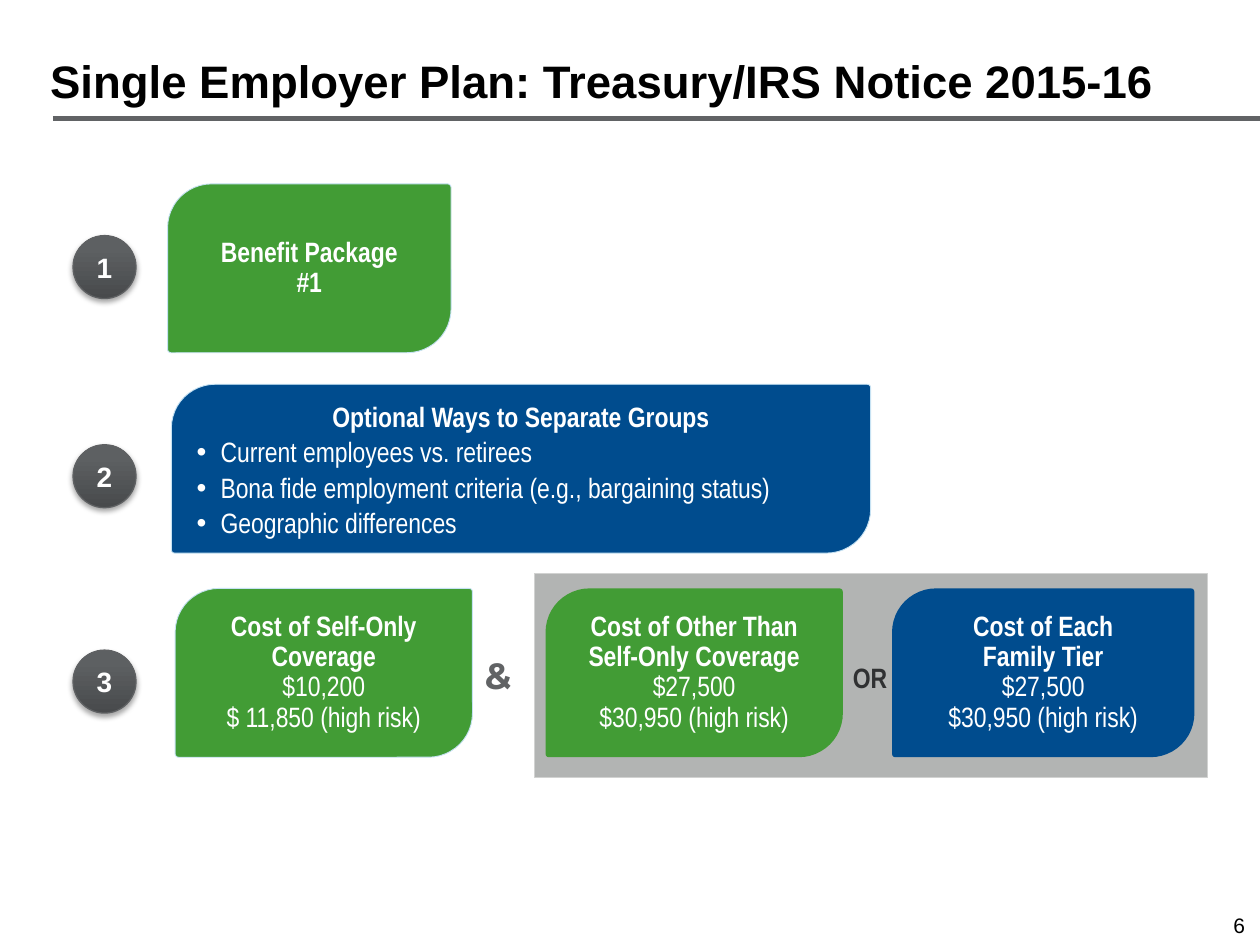
from dataclasses import dataclass

import pptx
import pptx.dml.color
import pptx.enum.dml
import pptx.enum.shapes
import pptx.enum.text
import pptx.oxml
import pptx.oxml.ns
import pptx.slide
import pptx.util
from pptx.util import Inches

ALIGN = pptx.enum.text.PP_ALIGN
ANCHOR = pptx.enum.text.MSO_ANCHOR
SHAPE = pptx.enum.shapes.MSO_SHAPE
GREEN, BLUE, PALE_BLUE, WHITE = "429C35", "004C8E", "C6E2F3", "FFFFFF"
GRAY, BLACK = "616365", "000000"
NARROW = "Arial Narrow"
CARD_HEIGHT = 1.34


@dataclass
class Card:
    left: float
    top: float
    width: float
    fill: str
    outline: str | None
    heading: tuple[str, ...]
    amounts: tuple[str, ...] = ()


@dataclass
class Label:
    text: str
    left: float
    top: float
    width: float
    height: float
    size: int
    font: str
    color: str
    bold: bool = True
    align: ALIGN = ALIGN.LEFT
    anchor: ANCHOR = ANCHOR.TOP


def rgb(color: str) -> pptx.dml.color.RGBColor:
    return pptx.dml.color.RGBColor.from_string(color)


def add_run(paragraph, text: str, size: int, font: str, color: str, bold: bool):
    run = paragraph.add_run()
    run.text = text
    values = {"size": pptx.util.Pt(size), "name": font, "bold": bold}
    for name, value in values.items():
        setattr(run.font, name, value)
    run.font.color.rgb = rgb(color)
    return run


def format_frame(frame, anchor: ANCHOR, inset: float | None = None) -> None:
    values = {"word_wrap": True, "vertical_anchor": anchor}
    if inset is not None:
        for side in ("left", "top", "right", "bottom"):
            values[f"margin_{side}"] = Inches(inset)
    for name, value in values.items():
        setattr(frame, name, value)


def add_block(slide: pptx.slide.Slide, preset: SHAPE, left: float, top: float,
              width: float, height: float, fill: str, outline: str | None):
    shape = slide.shapes.add_shape(
        preset, Inches(left), Inches(top), Inches(width), Inches(height))
    shape.shadow.inherit = False
    shape.fill.solid()
    shape.fill.fore_color.rgb = rgb(fill)
    if outline:
        shape.line.color.rgb = rgb(outline)
        shape.line.width = pptx.util.Pt(0.5)
    else:
        shape.line.fill.background()
    return shape


def add_card(slide: pptx.slide.Slide, card: Card):
    shape = add_block(slide, SHAPE.ROUND_2_DIAG_RECTANGLE, card.left, card.top,
                      card.width, CARD_HEIGHT, card.fill, card.outline)
    shape.adjustments[0] = 0.26
    shape.adjustments[1] = 0.02
    format_frame(shape.text_frame, ANCHOR.MIDDLE)
    paragraph = shape.text_frame.paragraphs[0]
    paragraph.alignment = ALIGN.CENTER
    paragraph.line_spacing = 0.9
    for index, text in enumerate(card.heading + card.amounts):
        if index:
            paragraph.add_line_break()
        add_run(paragraph, text, 16, NARROW, WHITE, index < len(card.heading))
    return shape


def add_bullet(frame, text: str) -> None:
    paragraph = frame.add_paragraph()
    properties = paragraph._p.get_or_add_pPr()
    properties.set("marL", str(Inches(0.19)))
    properties.set("indent", str(Inches(-0.19)))
    namespace = pptx.oxml.ns.nsdecls("a")
    for markup in (
        f'<a:buClr {namespace}><a:srgbClr val="{WHITE}"/></a:buClr>',
        f'<a:buFont {namespace} typeface="Arial"/>',
        f'<a:buChar {namespace} char="•"/>',
    ):
        properties.append(pptx.oxml.parse_xml(markup))
    values = {"alignment": ALIGN.LEFT, "line_spacing": 0.9,
              "space_before": pptx.util.Pt(3)}
    for name, value in values.items():
        setattr(paragraph, name, value)
    add_run(paragraph, text, 16, NARROW, WHITE, False)


def add_step(slide: pptx.slide.Slide, number: int, top: float) -> None:
    shape = add_block(slide, SHAPE.OVAL, 0.58, top, 0.5, 0.5, GRAY, "5F6163")
    shape.line.width = pptx.util.Pt(0.75)
    shape.fill.gradient()
    shape.fill.gradient_angle = 90
    for stop, position, color in zip(
            shape.fill.gradient_stops, (0, 0.8), ("484A4C", "5D6062")):
        stop.position = position
        stop.color.rgb = rgb(color)
    effects = shape._element.spPr.find(pptx.oxml.ns.qn("a:effectLst"))
    effects.append(pptx.oxml.parse_xml(
        f'<a:outerShdw {pptx.oxml.ns.nsdecls("a")} blurRad="{pptx.util.Pt(3.1)}" '
        f'dist="{pptx.util.Pt(1.8)}" dir="5400000" algn="t" rotWithShape="0">'
        f'<a:srgbClr val="{BLACK}"><a:alpha val="35000"/></a:srgbClr></a:outerShdw>'))
    format_frame(shape.text_frame, ANCHOR.MIDDLE, 0)
    paragraph = shape.text_frame.paragraphs[0]
    paragraph.alignment = ALIGN.CENTER
    add_run(paragraph, str(number), 16, "Arial", WHITE, True)


def add_label(slide: pptx.slide.Slide, label: Label):
    box = slide.shapes.add_textbox(Inches(label.left), Inches(label.top),
                                   Inches(label.width), Inches(label.height))
    format_frame(box.text_frame, label.anchor)
    paragraph = box.text_frame.paragraphs[0]
    paragraph.alignment = label.align
    paragraph.line_spacing = 0.9 if label.font == "Arial" else 1.0
    return add_run(paragraph, label.text, label.size, label.font, label.color, label.bold)


def add_title_rule(slide: pptx.slide.Slide) -> None:
    rule = slide.shapes.add_connector(
        pptx.enum.shapes.MSO_CONNECTOR.STRAIGHT,
        Inches(0.42), Inches(0.94), Inches(10), Inches(0.94))
    rule.line.color.rgb = rgb(GRAY)
    rule.line.width = pptx.util.Pt(3)
    rule._element.spPr.append(
        pptx.oxml.parse_xml(f'<a:effectLst {pptx.oxml.ns.nsdecls("a")}/>'))


def main() -> None:
    presentation = pptx.Presentation()
    presentation.slide_width = Inches(10)
    presentation.slide_height = Inches(7.5)
    slide = presentation.slides.add_slide(presentation.slide_layouts[6])

    add_label(slide, Label("6", 9.38, 7.23, 0.6, 0.25, 12, "Arial", BLACK, False,
                           ALIGN.RIGHT, ANCHOR.MIDDLE))
    add_title_rule(slide)
    add_block(slide, SHAPE.RECTANGLE, 4.24, 4.55, 5.34, 1.62, "B2B4B3", "D1D2D1")
    add_label(slide, Label("Single Employer Plan: Treasury/IRS Notice 2015-16",
                           0.3, 0.08, 9.53, 0.83, 26, "Arial", BLACK,
                           anchor=ANCHOR.BOTTOM))

    family_amounts = ("$27,500", "$30,950 (high risk)")
    for card in (
        Card(1.33, 1.46, 2.25, GREEN, PALE_BLUE, ("Benefit Package", "#1")),
        Card(4.33, 4.67, 2.36, GREEN, None,
             ("Cost of Other Than Self-Only Coverage",), family_amounts),
        Card(1.39, 4.67, 2.36, GREEN, PALE_BLUE,
             ("Cost of Self-Only Coverage",), ("$10,200", "$ 11,850 (high risk)")),
        Card(7.08, 4.67, 2.4, BLUE, None,
             ("Cost of Each", "Family Tier"), family_amounts),
    ):
        add_card(slide, card)

    add_label(slide, Label("OR", 6.67, 5.19, 0.56, 0.37, 16, NARROW, "303132"))
    for number, top in enumerate((1.87, 3.53, 5.16), start=1):
        add_step(slide, number, top)

    groups = add_card(slide, Card(1.36, 3.05, 5.55, BLUE, PALE_BLUE,
                                  ("Optional Ways to Separate Groups",)))
    groups.text_frame.vertical_anchor = ANCHOR.TOP
    for text in ("Current employees vs. retirees",
                 "Bona fide employment criteria (e.g., bargaining status)",
                 "Geographic differences"):
        add_bullet(groups.text_frame, text)

    ampersand = add_label(slide, Label("&", 3.75, 5, 0.58, 0.71, 36, "Montserrat", GRAY))
    ampersand._r.get_or_add_rPr().set("baseline", "15000")
    presentation.save("out.pptx")


if __name__ == "__main__":
    main()
